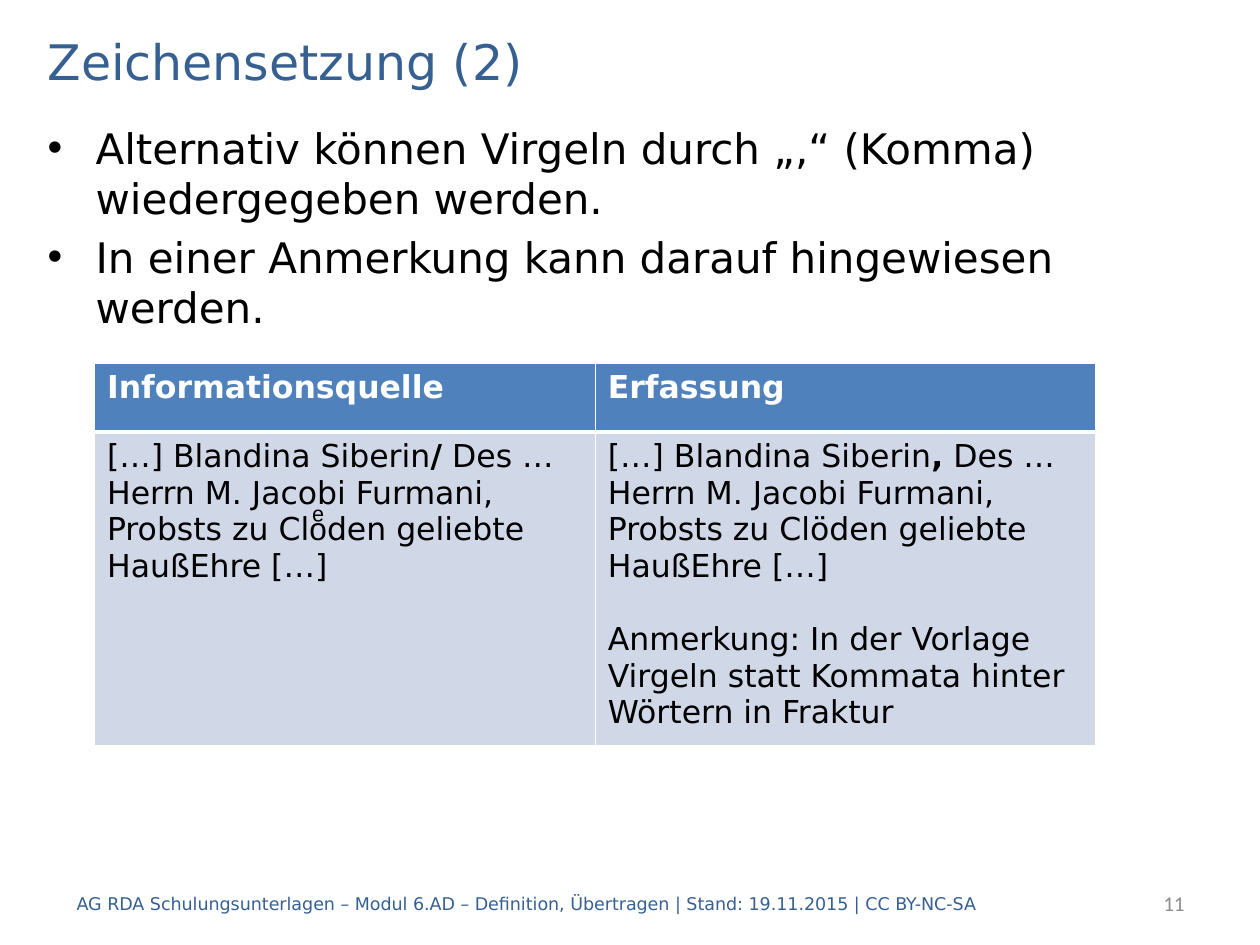
from dataclasses import dataclass

from lxml.etree import SubElement
from pptx import Presentation
from pptx.dml.color import RGBColor
from pptx.enum.text import MSO_ANCHOR, PP_ALIGN
from pptx.oxml.ns import qn
from pptx.util import Inches, Pt

BLUE = "376092"
BLACK = "000000"
WHITE = "FFFFFF"
GREY = "8C8C8C"
HEADER_FILL = "4F81BD"
BODY_FILL = "D0D8E8"


@dataclass(frozen=True)
class Run:
    text: str
    size: float
    color: str = BLACK
    font: str = "DejaVu Sans"
    bold: bool = False


@dataclass(frozen=True)
class Paragraph:
    runs: tuple[Run, ...]
    space_before: float = 0
    bullet: bool = False
    align: PP_ALIGN = PP_ALIGN.LEFT


@dataclass(frozen=True)
class TextBlock:
    left: float
    top: float
    width: float
    height: float
    paragraphs: tuple[Paragraph, ...]
    anchor: MSO_ANCHOR = MSO_ANCHOR.MIDDLE


@dataclass(frozen=True)
class Cell:
    paragraphs: tuple[Paragraph, ...]
    fill: str
    bottom_border: float


def rgb(color: str) -> RGBColor:
    return RGBColor.from_string(color)


def add_bullet(paragraph) -> None:
    properties = paragraph._p.get_or_add_pPr()
    properties.set("marL", str(Inches(0.38)))
    properties.set("indent", str(Inches(-0.38)))
    SubElement(properties, qn("a:buFont"), typeface="Arial")
    SubElement(properties, qn("a:buChar"), char="•")


def write_paragraphs(frame, paragraphs: tuple[Paragraph, ...]) -> None:
    for index, content in enumerate(paragraphs):
        paragraph = frame.add_paragraph() if index else frame.paragraphs[0]
        paragraph.alignment = content.align
        paragraph.space_before = Pt(content.space_before)
        if content.bullet:
            add_bullet(paragraph)
        for part in content.runs:
            run = paragraph.add_run()
            run.text = part.text
            run.font.size = Pt(part.size)
            run.font.name = part.font
            run.font.bold = part.bold
            run.font.color.rgb = rgb(part.color)


def add_text(slide, block: TextBlock) -> None:
    box = slide.shapes.add_textbox(
        Inches(block.left), Inches(block.top), Inches(block.width), Inches(block.height)
    )
    box.text_frame.word_wrap = True
    box.text_frame.vertical_anchor = block.anchor
    write_paragraphs(box.text_frame, block.paragraphs)


def add_border(cell_properties, side: str, width: float) -> None:
    line = SubElement(cell_properties, qn(f"a:{side}"), w=str(Pt(width)))
    SubElement(SubElement(line, qn("a:solidFill")), qn("a:srgbClr"), val=WHITE)


def fill_cell(cell, content: Cell) -> None:
    write_paragraphs(cell.text_frame, content.paragraphs)
    properties = cell._tc.get_or_add_tcPr()
    for side in ("lnL", "lnR", "lnT"):
        add_border(properties, side, 3 if side == "lnT" and content.fill == BODY_FILL else 1)
    add_border(properties, "lnB", content.bottom_border)
    cell.fill.solid()
    cell.fill.fore_color.rgb = rgb(content.fill)


def add_comparison(slide, rows: tuple[tuple[Cell, ...], ...]) -> None:
    heights = (0.55, 2.42)
    table = slide.shapes.add_table(
        len(rows), len(rows[0]), Inches(0.75), Inches(2.88), Inches(7.95), Inches(sum(heights))
    ).table
    table.horz_banding = False
    for row, height, contents in zip(table.rows, heights, rows):
        row.height = Inches(height)
        for cell, content in zip(row.cells, contents):
            fill_cell(cell, content)


def header_cell(label: str) -> Cell:
    return Cell((Paragraph((Run(label, 18, WHITE, bold=True),)),), HEADER_FILL, 3)


def quotation(separator: str, *ending: Run) -> Paragraph:
    return Paragraph((
        Run("[…] Blandina Siberin", 18),
        Run(separator, 18, bold=True),
        Run(" Des … Herrn M. Jacobi Furmani, Probsts zu Cl", 18),
        *ending,
    ))


def bullet(text: str) -> Paragraph:
    return Paragraph((Run(text, 24),), space_before=4.8, bullet=True)


TITLE = TextBlock(0.28, 0.2, 9.45, 0.56, (Paragraph((Run("Zeichensetzung (2)", 28, BLUE),)),))
RULES = TextBlock(
    0.28, 0.92, 9.45, 5.98,
    (
        bullet("Alternativ können Virgeln durch „,“ (Komma) wiedergegeben werden."),
        bullet("In einer Anmerkung kann darauf hingewiesen werden."),
    ),
    MSO_ANCHOR.TOP,
)
FOOTER = TextBlock(
    0.51, 6.97, 8.27, 0.4,
    (Paragraph((Run(
        "AG RDA Schulungsunterlagen – Modul 6.AD – Definition, Übertragen"
        " | Stand: 19.11.2015 | CC BY-NC-SA", 10, BLUE,
    ),)),),
)
PAGE_NUMBER = TextBlock(
    7.91, 6.97, 1.59, 0.4,
    (Paragraph((Run("11", 12, GREY, "Calibri"),), align=PP_ALIGN.RIGHT),),
)
SOURCE_TEXT = quotation(
    "/", Run("oͤ", 18, font="Arial"), Run("den geliebte HaußEhre […]", 18)
)
RECORDED_TEXT = quotation(",", Run("öden geliebte HaußEhre […]", 18))
REMARK = Paragraph(
    (Run("Anmerkung: In der Vorlage Virgeln statt Kommata hinter Wörtern in Fraktur", 18),),
    space_before=21,
)
COMPARISON = (
    (header_cell("Informationsquelle"), header_cell("Erfassung")),
    (Cell((SOURCE_TEXT,), BODY_FILL, 1), Cell((RECORDED_TEXT, REMARK), BODY_FILL, 1)),
)


def main() -> None:
    presentation = Presentation()
    presentation.slide_width = Inches(10)
    presentation.slide_height = Inches(7.5)
    slide = presentation.slides.add_slide(presentation.slide_layouts[6])
    for block in (TITLE, RULES, FOOTER, PAGE_NUMBER):
        add_text(slide, block)
    add_comparison(slide, COMPARISON)
    presentation.save("out.pptx")


if __name__ == "__main__":
    main()
